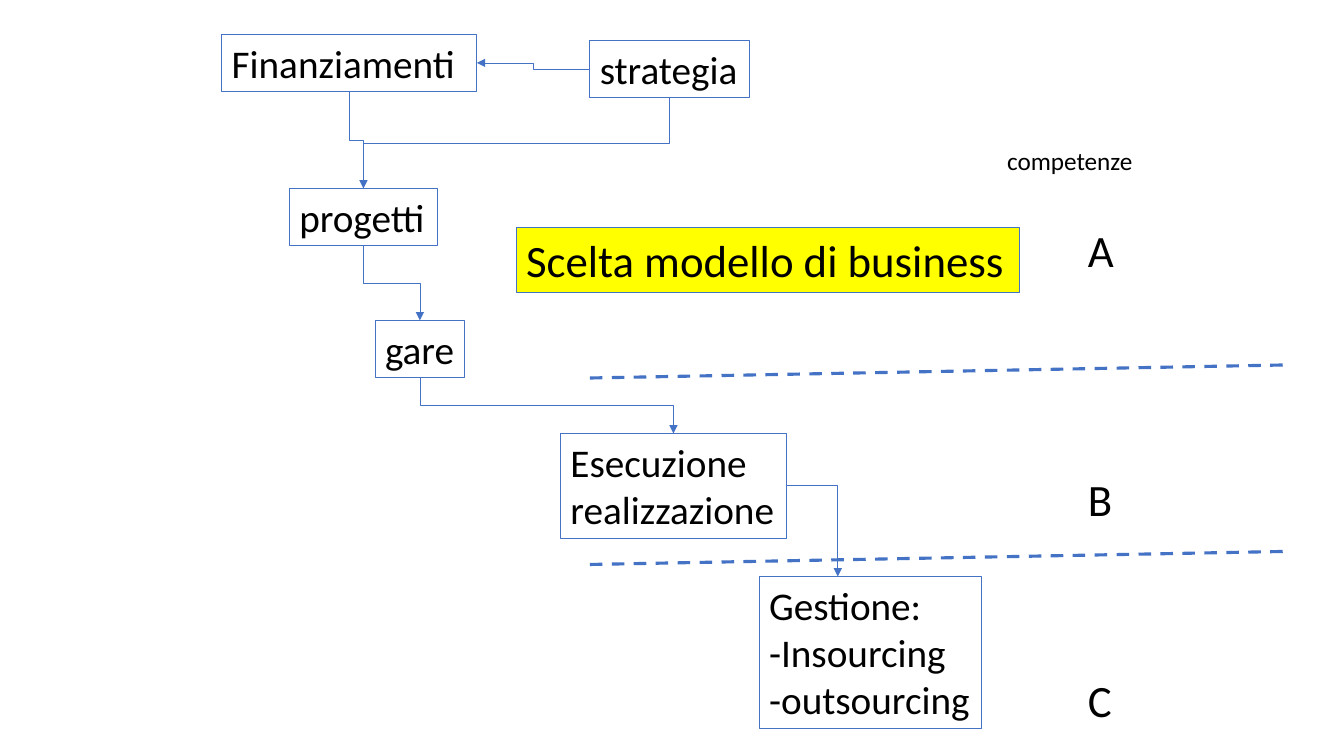
from dataclasses import dataclass

from pptx import Presentation
from pptx import util as u
from pptx.dml.color import RGBColor
from pptx.enum import dml, shapes, text
from pptx.oxml import ns, xmlchemy


@dataclass
class Theme:
    font: str = "Calibri"
    ink: str = "000000"
    blue: str = "4472C4"
    white: str = "FFFFFF"
    yellow: str = "FFFF00"
    small: int = 18
    body: int = 28
    large: int = 32
    edge: float = 0.75
    thin: float = 0.5
    thick: float = 2.25


class Board:
    def __init__(self, slide, theme):
        self.slide, self.theme = slide, theme

    def label(self, words, x, y, w, h, size, wrap=False):
        box = self.slide.shapes.add_textbox(*map(u.Inches, (x, y, w, h)))
        frame = box.text_frame
        frame.text = words
        frame.word_wrap = wrap
        frame.auto_size = text.MSO_AUTO_SIZE.SHAPE_TO_FIT_TEXT
        for para in frame.paragraphs:
            for run in para.runs:
                run.font.name, run.font.size = self.theme.font, u.Pt(size)
                run.font.color.rgb = RGBColor.from_string(self.theme.ink)
        return box

    def box(self, words, x, y, w, h, size=None, fill=None, wrap=False):
        box = self.label(words, x, y, w, h, size or self.theme.body, wrap)
        self.stroke(box.line, self.theme.edge)
        if fill:
            box.fill.solid()
            box.fill.fore_color.rgb = RGBColor.from_string(fill)
        return box

    def stroke(self, line, width):
        line.color.rgb = RGBColor.from_string(self.theme.blue)
        line.width = u.Pt(width)

    def line(self, kind, ends, width):
        line = self.slide.shapes.add_connector(kind, *map(u.Inches, ends))
        self.stroke(line.line, width)
        line.element.spPr.append(xmlchemy.OxmlElement("a:effectLst"))
        return line

    def divide(self, *ends):
        line = self.line(shapes.MSO_CONNECTOR.STRAIGHT, ends, self.theme.thick)
        line.line.dash_style = dml.MSO_LINE.DASH

    def arrow(self, line):
        tip = xmlchemy.OxmlElement("a:tailEnd")
        tip.set("type", "triangle")
        line.element.spPr.find(ns.qn("a:ln")).append(tip)

    def elbow(self, start, side, end, goal, tip=True):
        line = self.line(shapes.MSO_CONNECTOR.ELBOW, (0, 0, 0, 0), self.theme.thin)
        line.begin_connect(start, side)
        line.end_connect(end, goal)
        if side == 2:
            self.turn(line)
        if tip:
            self.arrow(line)

    def turn(self, line):
        """Rotate an elbow so that it leaves downwards."""
        dx, dy = line.end_x - line.begin_x, line.end_y - line.begin_y
        midx, midy = (line.begin_x + line.end_x) // 2, (line.begin_y + line.end_y) // 2
        line.width, line.height = dy, abs(dx)
        line.left, line.top = midx - dy // 2, midy - abs(dx) // 2
        form = line.element.spPr.find(ns.qn("a:xfrm"))
        form.set("rot", "5400000")
        form.set("flipH", "0")
        form.set("flipV", "1" if dx > 0 else "0")

    def corner(self, start, side, x, y):
        """Join a box to a point with a single bend."""
        line = self.line(shapes.MSO_CONNECTOR.ELBOW, (0, 0, x, y), self.theme.thin)
        line.begin_connect(start, side)
        line.element.spPr.find(ns.qn("a:prstGeom")).set("prst", "bentConnector2")
        self.arrow(line)


def main():
    deck = Presentation()
    deck.slide_width, deck.slide_height = u.Inches(13.33), u.Inches(7.5)
    theme = Theme()
    board = Board(deck.slides.add_slide(deck.slide_layouts[6]), theme)

    # Process steps
    funds = board.box("Finanziamenti", 2.2, 0.34, 2.53, 0.57, fill=theme.white, wrap=True)
    plan = board.box("strategia", 5.85, 0.4, 1.58, 0.57)
    work = board.box("progetti", 2.87, 1.87, 1.47, 0.57)
    bids = board.box("gare", 3.72, 3.18, 0.89, 0.57)
    build = board.box("Esecuzione\nrealizzazione", 5.56, 4.3, 2.24, 1.04)
    board.box("Gestione:\n-Insourcing\n-outsourcing", 7.53, 5.72, 2.21, 1.51)

    # Flow between the steps
    board.elbow(plan, 1, funds, 3)
    board.elbow(funds, 2, work, 0)
    board.elbow(plan, 2, work, 0, tip=False)
    board.elbow(work, 2, bids, 0)
    board.elbow(bids, 2, build, 0)
    board.corner(build, 3, 8.31, 5.72)

    # Dashed dividers
    for y in (3.75, 5.6):
        board.divide(5.85, y, 12.79, y - 0.13)

    # Skill levels
    for name, y in (("A", 2.16), ("B", 4.63), ("C", 6.62)):
        board.label(name, 10.69, y, 0.45, 0.64, theme.large)
    board.label("competenze", 9.89, 1.39, 1.46, 0.4, theme.small)

    # Highlighted choice
    board.box("Scelta modello di business", 5.12, 2.26, 4.99, 0.64,
              theme.large, theme.yellow, wrap=True)

    deck.save("out.pptx")


if __name__ == "__main__":
    main()
